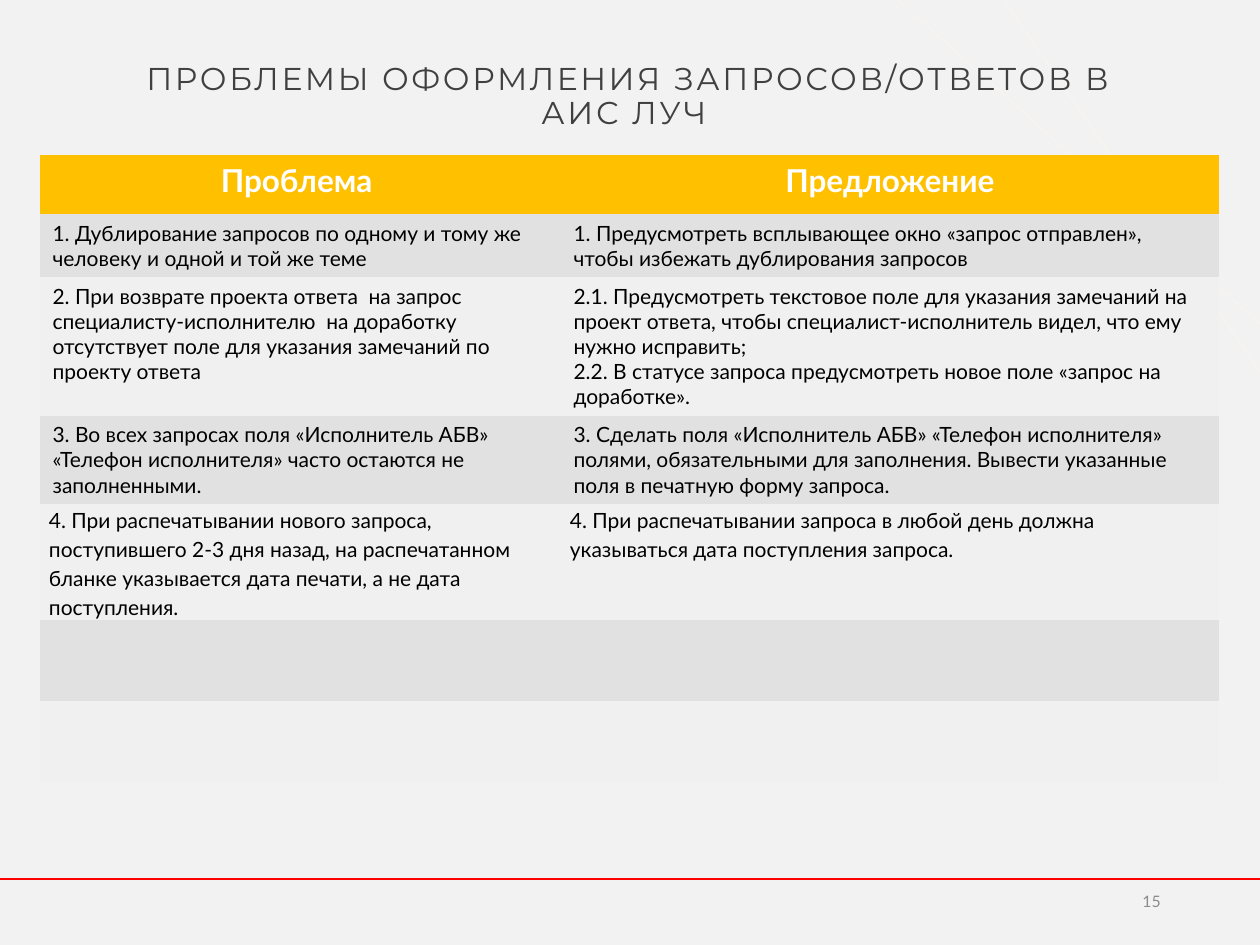
from lxml import etree
from pptx import Presentation
from pptx.dml.color import RGBColor
from pptx.enum.shapes import MSO_CONNECTOR
from pptx.enum.text import MSO_ANCHOR, MSO_AUTO_SIZE, PP_ALIGN
from pptx.oxml.ns import qn
from pptx.util import Emu, Pt

PX_PER_INCH = 126

TITLE = "ПРОБЛЕМЫ ОФОРМЛЕНИЯ ЗАПРОСОВ/ОТВЕТОВ В АИС ЛУЧ "
HEADERS = ["Проблема ", "Предложение"]
ISSUES = [
    ("1. Дублирование запросов по одному и тому же человеку и одной и той же теме",
     "1. Предусмотреть всплывающее окно «запрос отправлен», чтобы избежать дублирования запросов"),
    ("2. При возврате проекта ответа  на запрос специалисту-исполнителю  на доработку "
     "отсутствует поле для указания замечаний по проекту ответа",
     "2.1. Предусмотреть текстовое поле для указания замечаний на проект ответа, "
     "чтобы специалист-исполнитель видел, что ему нужно исправить;\n"
     "2.2. В статусе запроса предусмотреть новое поле «запрос на доработке»."),
    ("3. Во всех запросах поля «Исполнитель АБВ» «Телефон исполнителя» часто остаются "
     "не заполненными.",
     "3. Сделать поля «Исполнитель АБВ» «Телефон исполнителя» полями, обязательными "
     "для заполнения. Вывести указанные поля в печатную форму запроса."),
    ("4. При распечатывании нового запроса, поступившего 2-3 дня назад, на распечатанном "
     "бланке указывается дата печати, а не дата поступления.",
     "4. При распечатывании запроса в любой день должна указываться дата поступления запроса."),
    ("", ""),
    ("", ""),
]
COLUMN_WIDTHS = [521, 658]
ROW_HEIGHTS = [59, 59, 107, 81, 81, 81, 81]
SPACED_ROW = 4  # the row with looser lines and tight margins


def px(length):
    return Emu(round(length * 914400 / PX_PER_INCH))


def color(value):
    return RGBColor.from_string(value)


def place(shape, box):
    shape.left, shape.top, shape.width, shape.height = map(px, box)


def write(frame, text, size=12, font="Lato", fill="000000", bold=False,
          align=PP_ALIGN.LEFT, line_spacing=None, space_after=None, tracking=None):
    for index, line in enumerate(text.split("\n")):
        paragraph = frame.add_paragraph() if index else frame.paragraphs[0]
        paragraph.alignment = align
        paragraph.line_spacing = line_spacing
        paragraph.space_after = space_after
        run = paragraph.add_run()
        run.text = line
        run.font.size, run.font.name, run.font.bold = Pt(size), font, bold
        run.font.color.rgb = color(fill)
        if tracking:
            run.font._element.set("spc", str(int(tracking * 100)))


def add_line(slide, start, end, fill, width):
    line = slide.shapes.add_connector(MSO_CONNECTOR.STRAIGHT, *map(px, start + end))
    line.line.color.rgb = color(fill)
    line.line.width = Pt(width)
    etree.SubElement(line._element.spPr, qn("a:effectLst"))
    return line


def add_background(slide):
    slide.background.fill.solid()
    slide.background.fill.fore_color.rgb = color("F2F2F2")
    for start, end in [((898, 0), (1260, 324)), ((1004, 0), (1260, 372))]:
        line = add_line(slide, start, end, "FBF4EF", 0.5)
        # Keep the line behind the title
        slide.shapes.title._element.addprevious(line._element)


def add_title(slide, box):
    title = slide.shapes.title
    place(title, box)
    frame = title.text_frame
    frame.auto_size = MSO_AUTO_SIZE.NONE
    frame.word_wrap = True
    frame.vertical_anchor = MSO_ANCHOR.MIDDLE
    write(frame, TITLE, size=18, font="Montserrat", fill="404040",
          align=PP_ALIGN.CENTER, line_spacing=0.9, tracking=1.5)


def format_cell(cell, text, row):
    cell.fill.solid()
    if row == 0:
        cell.fill.fore_color.rgb = color("FFC000")
        write(cell.text_frame, text, size=18, fill="FFFFFF", bold=True, align=PP_ALIGN.CENTER)
        return
    cell.fill.fore_color.rgb = color("E1E1E1" if row % 2 else "F0F0F0")
    spacing = {}
    if row == SPACED_ROW:
        cell.margin_left = cell.margin_right = px(9)
        cell.margin_top = cell.margin_bottom = 0
        spacing = {"line_spacing": 1.15, "space_after": Pt(10)}
    if text:
        write(cell.text_frame, text, **spacing)


def add_issue_table(slide, left, top):
    rows = [HEADERS, *ISSUES]
    box = (left, top, sum(COLUMN_WIDTHS), sum(ROW_HEIGHTS))
    table = slide.shapes.add_table(len(rows), len(HEADERS), *map(px, box)).table
    for column, width in zip(table.columns, COLUMN_WIDTHS):
        column.width = px(width)
    for row, (texts, height) in enumerate(zip(rows, ROW_HEIGHTS)):
        table.rows[row].height = px(height)
        for column, text in enumerate(texts):
            format_cell(table.cell(row, column), text, row)
    # Plain style without grid lines
    table._tbl.tblPr.find(qn("a:tableStyleId")).text = "{2D5ABB26-0587-4C30-8999-92F81FD0307C}"


def add_footer(slide, left, top, width):
    # Red rule with the page number under its right end
    add_line(slide, (left, top), (left + width, top), "FF0000", 1.25)
    number = slide.shapes.add_textbox(*map(px, (left + 890, top - 3, 283, 50)))
    frame = number.text_frame
    frame.word_wrap = True
    frame.vertical_anchor = MSO_ANCHOR.MIDDLE
    write(frame, "15", size=9, fill="8C8C8C", align=PP_ALIGN.RIGHT)


def main():
    presentation = Presentation()
    presentation.slide_width, presentation.slide_height = px(1260), px(945)
    slide = presentation.slides.add_slide(presentation.slide_layouts[5])
    add_background(slide)
    add_title(slide, (89, 6, 1081, 183))
    add_issue_table(slide, 40, 155)
    add_footer(slide, 0, 879, 1260)
    presentation.save("out.pptx")


if __name__ == "__main__":
    main()
